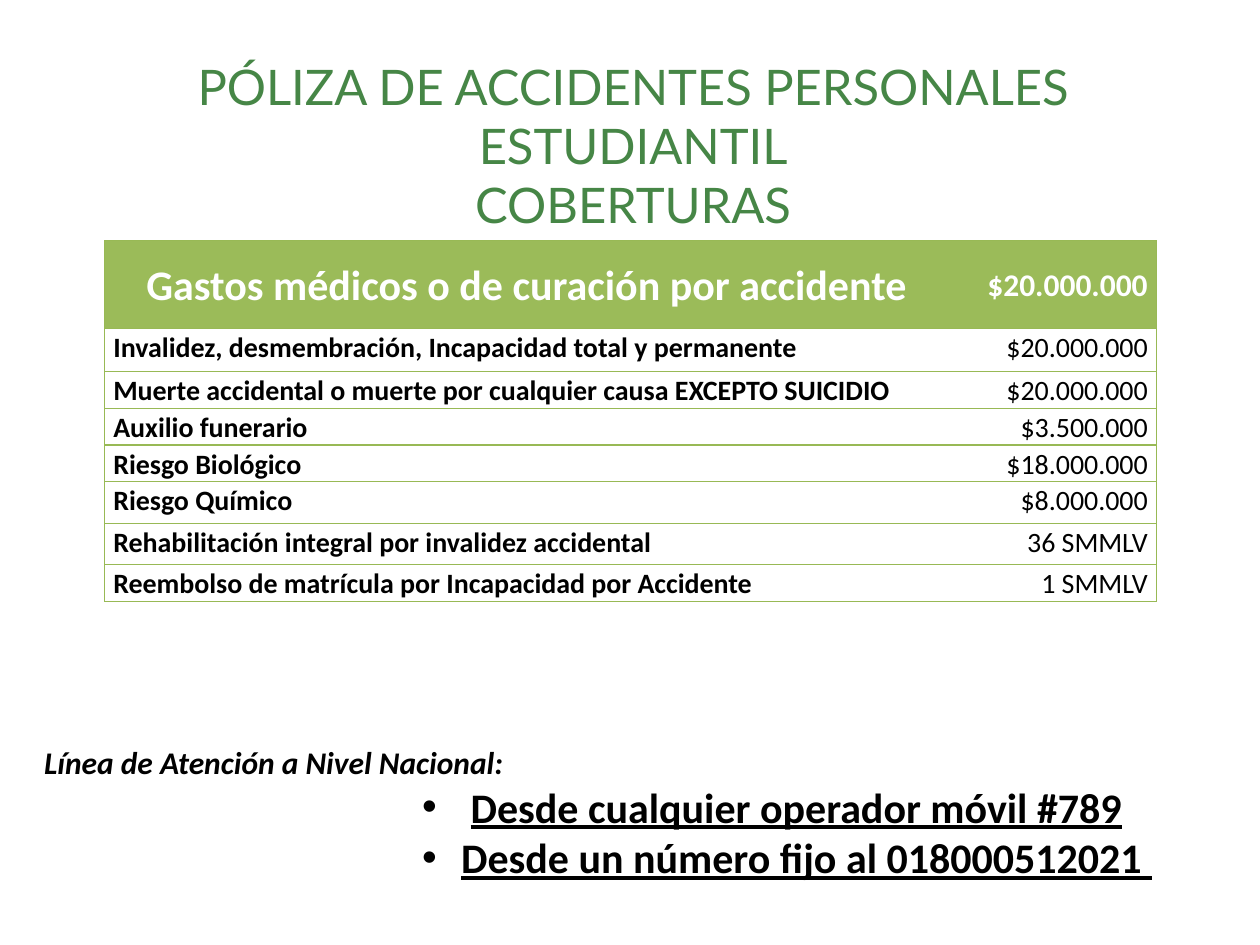
from lxml import etree
from pptx import Presentation
from pptx.dml.color import RGBColor
from pptx.enum.text import MSO_ANCHOR, MSO_AUTO_SIZE, PP_ALIGN
from pptx.oxml.ns import qn
from pptx.util import Inches, Pt

LEFT, CENTER, RIGHT = PP_ALIGN.LEFT, PP_ALIGN.CENTER, PP_ALIGN.RIGHT
TOP, MIDDLE = MSO_ANCHOR.TOP, MSO_ANCHOR.MIDDLE
NO_AUTOFIT = MSO_AUTO_SIZE.NONE

BLACK = RGBColor(0x00, 0x00, 0x00)
WHITE = RGBColor(0xFF, 0xFF, 0xFF)
TITLE_GREEN = RGBColor(0x46, 0x86, 0x46)
HEADER_GREEN = RGBColor(0x9B, 0xBB, 0x59)
BORDER_GREEN = RGBColor(0x98, 0xB9, 0x55)

GRID_COLUMNS, GRID_ROWS = 100, 75

TITLE = "PÓLIZA DE ACCIDENTES PERSONALES ESTUDIANTIL\nCOBERTURAS"
COVERAGES = [
    ("Gastos médicos o de curación por accidente", "$20.000.000"),
    ("Invalidez, desmembración, Incapacidad total y permanente", "$20.000.000"),
    ("Muerte accidental o muerte por cualquier causa EXCEPTO SUICIDIO", "$20.000.000"),
    ("Auxilio funerario", "$3.500.000"),
    ("Riesgo Biológico", "$18.000.000"),
    ("Riesgo Químico", "$8.000.000"),
    ("Rehabilitación integral por invalidez accidental", "36 SMMLV"),
    ("Reembolso de matrícula por Incapacidad por Accidente", "1 SMMLV"),
]
COLUMN_WIDTHS = [67, 16.5]
ROW_HEIGHTS = [7, 3.4, 2.9, 2.9, 2.9, 3.3, 3.3, 2.9]
CONTACT_HEADING = "Línea de Atención a Nivel Nacional:"
CONTACT_LINES = [
    (" ", "Desde cualquier operador móvil #789"),
    ("", "Desde un número fijo al 018000512021 "),
]


def write(paragraph, text, size, color=BLACK, font="Calibri",
          bold=False, italic=False, underline=False):
    for index, line in enumerate(text.split("\n")):
        if index:
            paragraph.add_line_break()
        run = paragraph.add_run()
        run.text = line
        run.font.name = font
        run.font.size = Pt(size)
        run.font.color.rgb = color
        run.font.bold = bold
        run.font.italic = italic
        run.font.underline = underline


def set_bullet(paragraph, indent=0, hanging=0, symbol=None):
    properties = paragraph._p.get_or_add_pPr()
    properties.set("marL", str(Inches(indent)))
    properties.set("indent", str(-Inches(hanging)))
    if symbol:
        etree.SubElement(properties, qn("a:buFont"), typeface="Arial")
        etree.SubElement(properties, qn("a:buChar"), char=symbol)
    else:
        etree.SubElement(properties, qn("a:buNone"))


def set_borders(cell, visible_sides):
    properties = cell._tc.get_or_add_tcPr()
    for side in "LRTB":
        line = etree.SubElement(properties, qn(f"a:ln{side}"), w=str(Pt(0.75)))
        if side in visible_sides:
            fill = etree.SubElement(line, qn("a:solidFill"))
            etree.SubElement(fill, qn("a:srgbClr"), val=str(BORDER_GREEN))
        else:
            etree.SubElement(line, qn("a:noFill"))


class CoverageSlide:
    def __init__(self, presentation):
        self.column = presentation.slide_width / GRID_COLUMNS
        self.row = presentation.slide_height / GRID_ROWS
        self.slide = presentation.slides.add_slide(presentation.slide_layouts[1])

    def across(self, columns):
        return round(columns * self.column)

    def down(self, rows):
        return round(rows * self.row)

    def box(self, left, top, width, height):
        return self.across(left), self.down(top), self.across(width), self.down(height)

    def place(self, placeholder, *area):
        placeholder.left, placeholder.top, placeholder.width, placeholder.height = self.box(*area)
        frame = placeholder.text_frame
        frame.word_wrap = True
        frame.auto_size = NO_AUTOFIT
        frame.vertical_anchor = TOP
        return frame

    def title(self, text, *area):
        paragraph = self.place(self.slide.shapes.title, *area).paragraphs[0]
        paragraph.alignment = CENTER
        write(paragraph, text, 28, TITLE_GREEN, font="Lato")

    def table(self, rows, left, top):
        area = self.box(left, top, sum(COLUMN_WIDTHS), sum(ROW_HEIGHTS))
        table = self.slide.shapes.add_table(len(rows), len(COLUMN_WIDTHS), *area).table
        table.horz_banding = False
        for column, width in zip(table.columns, COLUMN_WIDTHS):
            column.width = self.across(width)
        for row, height, (coverage, amount) in zip(table.rows, ROW_HEIGHTS, rows):
            row.height = self.down(height)
            is_header = row is not None and coverage == rows[0][0]
            self.cell(row.cells[0], coverage, "LTB", is_header, 24,
                      CENTER if is_header else LEFT, bold=True)
            self.cell(row.cells[1], amount, "RTB", is_header, 18, RIGHT, bold=is_header)

    def cell(self, cell, text, sides, is_header, header_size, alignment, bold):
        set_borders(cell, sides)
        cell.margin_left = cell.margin_right = Inches(0.07)
        cell.margin_top = cell.margin_bottom = 0
        cell.vertical_anchor = MIDDLE if is_header else TOP
        cell.fill.solid()
        cell.fill.fore_color.rgb = HEADER_GREEN if is_header else WHITE
        paragraph = cell.text_frame.paragraphs[0]
        paragraph.alignment = alignment
        paragraph.line_spacing = 1.07
        write(paragraph, text, header_size if is_header else 16,
              WHITE if is_header else BLACK, bold=bold)

    def contacts(self, heading, lines, *area):
        frame = self.place(self.slide.placeholders[1], *area)
        first = frame.paragraphs[0]
        set_bullet(first)
        first.space_before = Pt(0)
        write(first, heading, 18, bold=True, italic=True)
        for lead, text in lines:
            paragraph = frame.add_paragraph()
            paragraph.level = 6
            set_bullet(paragraph, indent=3.31, hanging=0.31, symbol="•")
            paragraph.space_before = Pt(0)
            if lead:
                write(paragraph, lead, 24)
            write(paragraph, text, 24, bold=True, underline=True)


def main():
    presentation = Presentation()
    presentation.slide_width = Inches(10)
    presentation.slide_height = Inches(7.5)
    slide = CoverageSlide(presentation)
    slide.title(TITLE, 2.5, 4, 95.5, 10.6)
    slide.table(COVERAGES, 8.3, 19.1)
    slide.contacts(CONTACT_HEADING, CONTACT_LINES, 2.5, 58.5, 90.9, 12.1)
    presentation.save("out.pptx")


if __name__ == "__main__":
    main()
